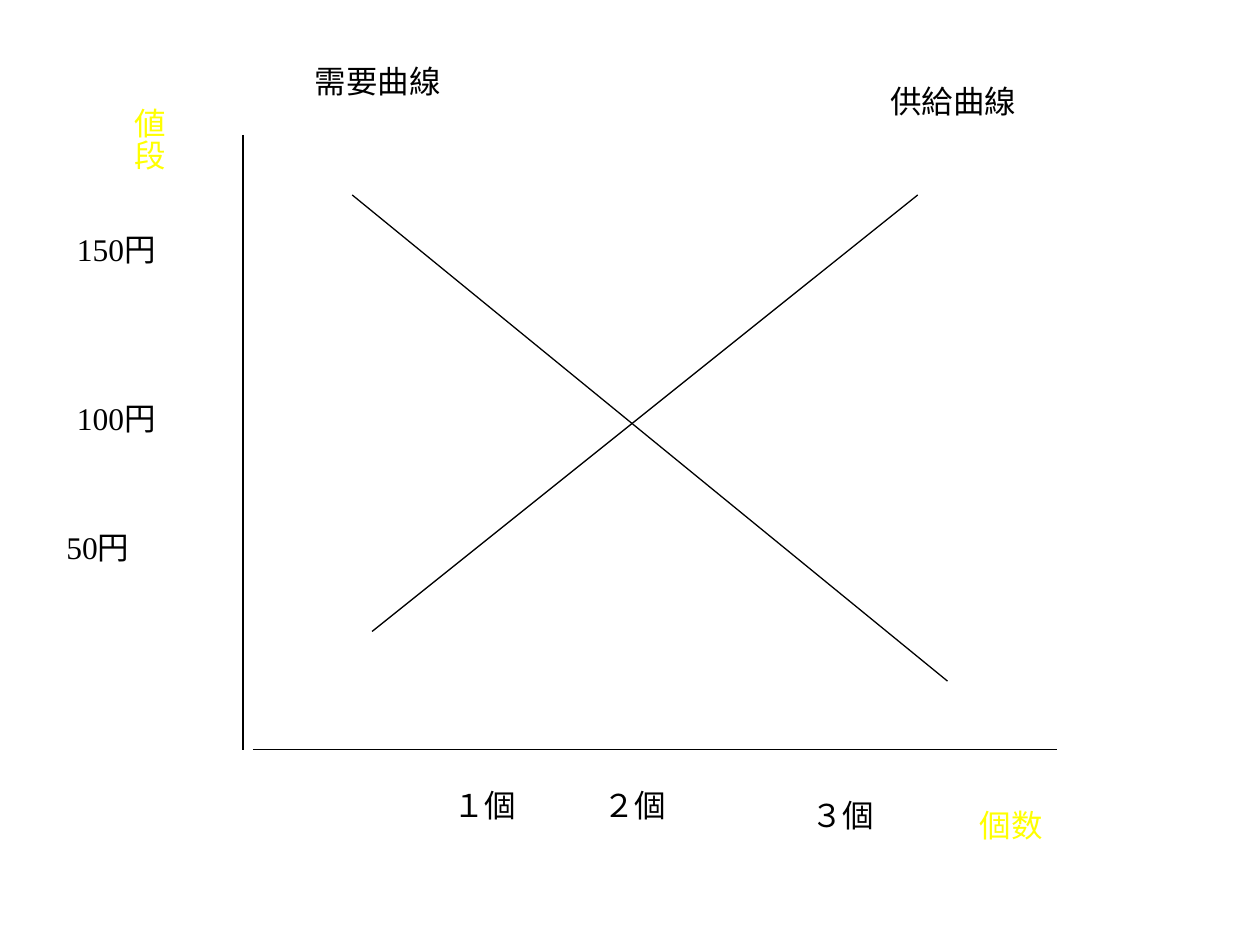
from lxml.etree import SubElement
from pptx import Presentation
from pptx.dml.color import RGBColor
from pptx.enum.shapes import MSO_CONNECTOR
from pptx.enum.text import MSO_AUTO_SIZE
from pptx.oxml.ns import qn
from pptx.util import Cm, Pt

BLACK = RGBColor(0x00, 0x00, 0x00)
YELLOW = RGBColor(0xFF, 0xFF, 0x00)
FONT = "Times New Roman"
LABEL_HEIGHT = 1.02

# Start x, start y, end x, end y in cm
AXES = [
    (4.9, 2.72, 4.9, 15.11),
    (5.1, 15.11, 21.31, 15.11),
]
CURVES = [
    (7.5, 12.73, 18.5, 3.93),  # supply
    (7.1, 3.93, 19.1, 13.73),  # demand
]

# Text, left, top, width in cm
QUANTITIES = [
    ("１個", 8.89, 15.72, 2.59),
    ("２個", 11.91, 15.72, 3.0),
    ("３個", 16.1, 15.93, 2.59),
]
PRICES = [
    ("150円", 1.3, 4.52, 3.0),
    ("100円", 1.3, 7.92, 3.0),
    ("50円", 1.09, 10.52, 3.4),
]
CURVE_NAMES = [
    ("供給曲線", 17.7, 1.52, 5.79),
    ("需要曲線", 6.1, 1.12, 7.01),
]
QUANTITY_TITLE = ("個数", 19.5, 16.13, 4.4)
PRICE_TITLE = ("値段", 2.24, 1.93, 1.27)
PRICE_TITLE_HEIGHT = 4.4


def add_line(slide, x1, y1, x2, y2):
    line = slide.shapes.add_connector(
        MSO_CONNECTOR.STRAIGHT, Cm(x1), Cm(y1), Cm(x2), Cm(y2))
    line.line.color.rgb = BLACK
    line.line.width = Pt(0.75)
    SubElement(line._element.spPr, qn("a:effectLst"))


def add_label(slide, text, left, top, width, height=LABEL_HEIGHT,
              color=BLACK, vertical=False):
    sp = slide.shapes.add_textbox(Cm(left), Cm(top), Cm(width), Cm(height))
    tf = sp.text_frame
    tf.word_wrap = True
    tf.auto_size = MSO_AUTO_SIZE.SHAPE_TO_FIT_TEXT
    if vertical:
        tf._txBody.bodyPr.set("vert", "eaVert")
    p = tf.paragraphs[0]
    p.text = text
    p.font.name = FONT
    p.font.size = Pt(18)
    p.font.color.rgb = color


def main():
    prs = Presentation()
    prs.slide_width, prs.slide_height = Cm(25.4), Cm(19.05)
    slide = prs.slides.add_slide(prs.slide_layouts[6])
    for line in AXES + CURVES:
        add_line(slide, *line)
    for label in QUANTITIES + PRICES + CURVE_NAMES:
        add_label(slide, *label)
    add_label(slide, *QUANTITY_TITLE, color=YELLOW)
    add_label(slide, *PRICE_TITLE, height=PRICE_TITLE_HEIGHT,
              color=YELLOW, vertical=True)
    prs.save("out.pptx")


if __name__ == "__main__":
    main()
